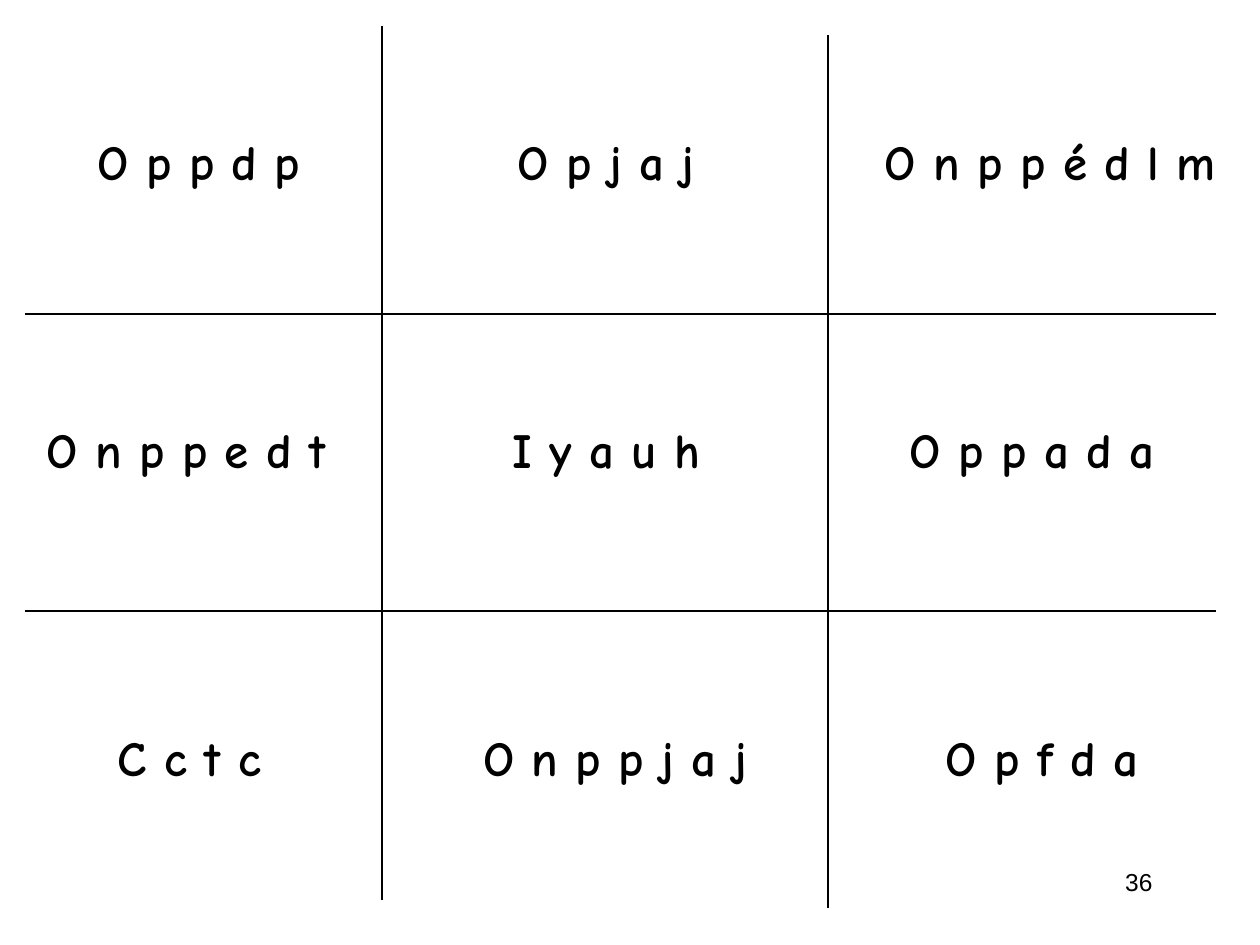
from dataclasses import dataclass

from lxml import etree
from pptx import Presentation
from pptx import util as u
from pptx.dml.color import RGBColor
from pptx.enum import shapes, text
from pptx.oxml.ns import qn

SCALE = 914400 / 126


@dataclass(frozen=True)
class Theme:
    ink: RGBColor = RGBColor(0, 0, 0)
    paper: RGBColor = RGBColor(255, 255, 255)
    hand: str = "Comic Neue"
    plain: str = "Arial"
    big: int = 28
    small: int = 14
    rule: float = 0.75


@dataclass(frozen=True)
class Rule:
    x1: int
    y1: int
    x2: int
    y2: int


@dataclass(frozen=True)
class Card:
    words: str
    left: int
    width: int = 348


THEME = Theme()
CARD_TALL = 72

RULES = [Rule(25, y, 1216, y) for y in (314, 611)] + [
    Rule(382, 26, 382, 900),
    Rule(828, 35, 828, 908),
]

ROWS = {
    125: [Card("O p p d p", 25), Card("O p j a j", 432),
          Card("O n p p é d l m ", 858, 402)],
    413: [Card("O n p p e d t", 0, 372), Card("I y a u h", 432),
          Card("O p p a d a", 858)],
    721: [Card("O n p p j a j", 441), Card("O p f d a", 868)],
}


def px(size: int) -> u.Emu:
    return u.Emu(round(size * SCALE))


def draw_rule(slide, rule: Rule) -> None:
    line = slide.shapes.add_connector(
        shapes.MSO_CONNECTOR.STRAIGHT,
        px(rule.x1), px(rule.y1), px(rule.x2), px(rule.y2))
    line.line.color.rgb = THEME.ink
    line.line.width = u.Pt(THEME.rule)
    etree.SubElement(line._element.spPr, qn("a:effectLst"))


def write(slide, words: str, left: int, top: int, width: int, tall: int, *,
          font: str = THEME.hand, size: int = THEME.big, bold: bool = True,
          align=text.PP_ALIGN.CENTER, wrap: bool = True,
          fit=text.MSO_AUTO_SIZE.SHAPE_TO_FIT_TEXT) -> None:
    box = slide.shapes.add_textbox(px(left), px(top), px(width), px(tall))
    frame = box.text_frame
    frame.word_wrap = wrap
    frame.auto_size = fit
    para = frame.paragraphs[0]
    para.alignment = align
    run = para.add_run()
    run.text = words
    run.font.name = font
    run.font.size = u.Pt(size)
    run.font.bold = bold
    run.font.color.rgb = THEME.ink


def main() -> None:
    deck = Presentation()
    deck.slide_width, deck.slide_height = px(1260), px(945)
    slide = deck.slides.add_slide(deck.slide_layouts[6])
    slide.background.fill.solid()
    slide.background.fill.fore_color.rgb = THEME.paper

    for rule in RULES:
        draw_rule(slide, rule)
    for top, cards in ROWS.items():
        for card in cards:
            write(slide, card.words, card.left, top, card.width, CARD_TALL)
    write(slide, "C c t c", 105, 721, 193, CARD_TALL,
          align=text.PP_ALIGN.LEFT, wrap=False)
    write(slide, "36", 903, 861, 262, 63, font=THEME.plain, size=THEME.small,
          bold=False, align=text.PP_ALIGN.RIGHT, fit=text.MSO_AUTO_SIZE.NONE)
    deck.save("out.pptx")


if __name__ == "__main__":
    main()
